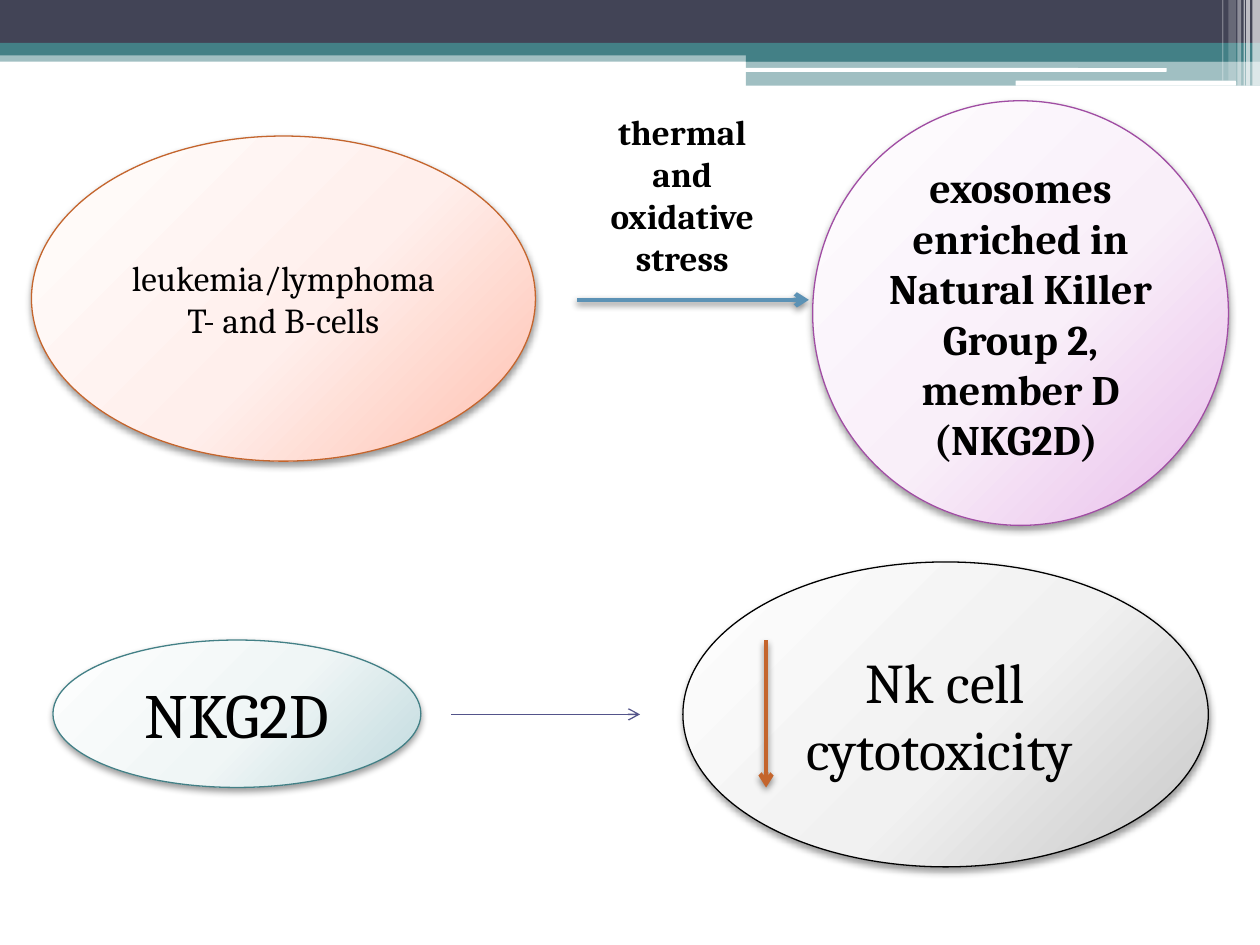
import pptx
import pptx.util
import pptx.dml.color
import pptx.enum.shapes
import pptx.enum.text
import pptx.oxml
import pptx.oxml.ns

RGBColor = pptx.dml.color.RGBColor
Shape = pptx.enum.shapes.MSO_SHAPE
Align = pptx.enum.text.PP_ALIGN
Anchor = pptx.enum.text.MSO_ANCHOR

WHITE = RGBColor(0xFF, 0xFF, 0xFF)
BLACK = RGBColor(0x00, 0x00, 0x00)
SLATE = RGBColor(0x42, 0x44, 0x56)
TEAL = RGBColor(0x43, 0x80, 0x86)
ORANGE = RGBColor(0xC4, 0x65, 0x2D)
BLUE = RGBColor(0x5C, 0x92, 0xB5)
PURPLE = RGBColor(0xA0, 0x4D, 0xA3)
INDIGO = RGBColor(0x53, 0x54, 0x8A)

# Glow colours from the upper left to the lower right of an ellipse
PEACH_GLOW = (RGBColor(0xFF, 0xFE, 0xFD), RGBColor(0xFF, 0xEF, 0xEC), RGBColor(0xFF, 0xBF, 0xAE))
LILAC_GLOW = (RGBColor(0xFE, 0xFE, 0xFF), RGBColor(0xF9, 0xEF, 0xF9), RGBColor(0xE8, 0xBB, 0xEA))
TEAL_GLOW = (RGBColor(0xFE, 0xFE, 0xFE), RGBColor(0xF0, 0xF6, 0xF6), RGBColor(0xBF, 0xD9, 0xDD))
GREY_GLOW = (RGBColor(0xFE, 0xFE, 0xFE), RGBColor(0xF1, 0xF1, 0xF1), RGBColor(0xC5, 0xC5, 0xC5))
GLOW_STOPS = (0, 55, 100)

COLUMNS, ROWS = 1000, 750
NAMESPACE = pptx.oxml.ns.nsdecls("a")


class SlideBuilder:
    """Draws on one slide; places are columns and rows of a fine grid."""

    font = "Cambria"

    def __init__(self, presentation):
        self.column = presentation.slide_width / COLUMNS
        self.row = presentation.slide_height / ROWS
        self.slide = presentation.slides.add_slide(presentation.slide_layouts[6])

    def place(self, at):
        scales = (self.column, self.row, self.column, self.row)
        return [round(value * scale) for value, scale in zip(at, scales)]

    def band(self, at, color, opacity=100, rounded=False):
        kind = Shape.ROUNDED_RECTANGLE if rounded else Shape.RECTANGLE
        shape = self.slide.shapes.add_shape(kind, *self.place(at))
        shape.shadow.inherit = False
        shape.fill.solid()
        shape.fill.fore_color.rgb = color
        shape.line.fill.background()
        if opacity < 100:
            color_element = shape._element.spPr.find(".//" + pptx.oxml.ns.qn("a:srgbClr"))
            color_element.append(pptx.oxml.parse_xml(
                f'<a:alpha {NAMESPACE} val="{opacity * 1000}"/>'))

    def ellipse(self, at, glow, outline, text, size, bold=False):
        shape = self.slide.shapes.add_shape(Shape.OVAL, *self.place(at))
        shape.line.color.rgb = outline
        shape.line.width = pptx.util.Pt(0.75)
        stops = "".join(
            f'<a:gs pos="{stop * 1000}"><a:srgbClr val="{color}"/></a:gs>'
            for stop, color in zip(GLOW_STOPS, glow))
        gradient = pptx.oxml.parse_xml(
            f'<a:gradFill {NAMESPACE} rotWithShape="1"><a:gsLst>{stops}</a:gsLst>'
            '<a:path path="circle"><a:fillToRect l="-40000" t="-90000" r="140000" b="190000"/>'
            '</a:path></a:gradFill>')
        properties = shape._element.spPr
        properties.find(pptx.oxml.ns.qn("a:prstGeom")).addnext(gradient)
        self.effects(properties, opacity=40, blur=4.1)
        shape.text_frame.vertical_anchor = Anchor.MIDDLE
        self.add_text(shape.text_frame, text, size, bold)

    def label(self, at, text, size):
        frame = self.slide.shapes.add_textbox(*self.place(at)).text_frame
        frame.auto_size = pptx.enum.text.MSO_AUTO_SIZE.SHAPE_TO_FIT_TEXT
        self.add_text(frame, text, size, bold=True)

    def arrow(self, start, end, color, width, shadow=True):
        connector = self.slide.shapes.add_connector(
            pptx.enum.shapes.MSO_CONNECTOR.STRAIGHT, *self.place(start + end))
        connector.line.color.rgb = color
        connector.line.width = pptx.util.Pt(width)
        properties = connector._element.spPr
        properties.find(pptx.oxml.ns.qn("a:ln")).append(
            pptx.oxml.parse_xml(f'<a:tailEnd {NAMESPACE} type="arrow"/>'))
        self.effects(properties, opacity=45 if shadow else 0, blur=4)

    def effects(self, properties, opacity, blur):
        """Give a downward shadow, or none when the opacity is zero."""
        shadow = (
            f'<a:outerShdw blurRad="{pptx.util.Pt(blur)}" dist="{pptx.util.Pt(2)}" '
            'dir="5400000" rotWithShape="0"><a:srgbClr val="000000">'
            f'<a:alpha val="{opacity * 1000}"/></a:srgbClr></a:outerShdw>') if opacity else ""
        properties.append(pptx.oxml.parse_xml(
            f'<a:effectLst {NAMESPACE}>{shadow}</a:effectLst>'))

    def add_text(self, frame, text, size, bold):
        frame.word_wrap = True
        paragraph = frame.paragraphs[0]
        paragraph.alignment = Align.CENTER
        run = paragraph.add_run()
        run.text = text
        run.font.name = self.font
        run.font.size = pptx.util.Pt(size)
        run.font.bold = bold
        run.font.color.rgb = BLACK


def draw_header(builder):
    builder.band((0, 40, 1000, 9), TEAL, 50)
    builder.band((0, 0, 1000, 34), SLATE)
    builder.band((0, 34, 1000, 10), TEAL)
    builder.band((592, 39, 408, 10), TEAL)
    builder.band((592, 48, 408, 20), TEAL, 50)
    builder.band((591, 54, 335, 3), WHITE, rounded=True)
    builder.band((806, 64, 175, 4), WHITE, rounded=True)
    stripes = ((994, 6, 68, 65), (989, 3, 68, 65), (987, 1, 68, 60),
               (982, 3, 68, 40), (975, 6, 64, 20), (970, 1, 64, 30))
    for left, width, height, opacity in stripes:
        builder.band((left, 0, width, height), WHITE, opacity)


def draw_pathway(builder):
    builder.ellipse((25, 108, 400, 258), PEACH_GLOW, ORANGE,
                    "leukemia/lymphoma T- and B-cells", 20)
    builder.arrow((458, 238), (642, 238), BLUE, 2.5)
    builder.label((458, 83, 167, 145), "thermal and oxidative stress", 20)
    builder.ellipse((645, 80, 330, 337), LILAC_GLOW, PURPLE,
                    "exosomes enriched in Natural Killer Group 2, member D (NKG2D) ", 24, bold=True)
    builder.ellipse((42, 508, 292, 117), TEAL_GLOW, TEAL, "NKG2D", 36)
    builder.arrow((358, 567), (508, 567), INDIGO, 0.75, shadow=False)
    builder.ellipse((542, 446, 417, 242), GREY_GLOW, BLACK, "Nk cell cytotoxicity ", 32)
    builder.arrow((608, 508), (608, 625), ORANGE, 2.5)


def main():
    presentation = pptx.Presentation()
    presentation.slide_width = pptx.util.Inches(10)
    presentation.slide_height = pptx.util.Inches(7.5)
    builder = SlideBuilder(presentation)
    draw_header(builder)
    draw_pathway(builder)
    presentation.save("out.pptx")


if __name__ == "__main__":
    main()
